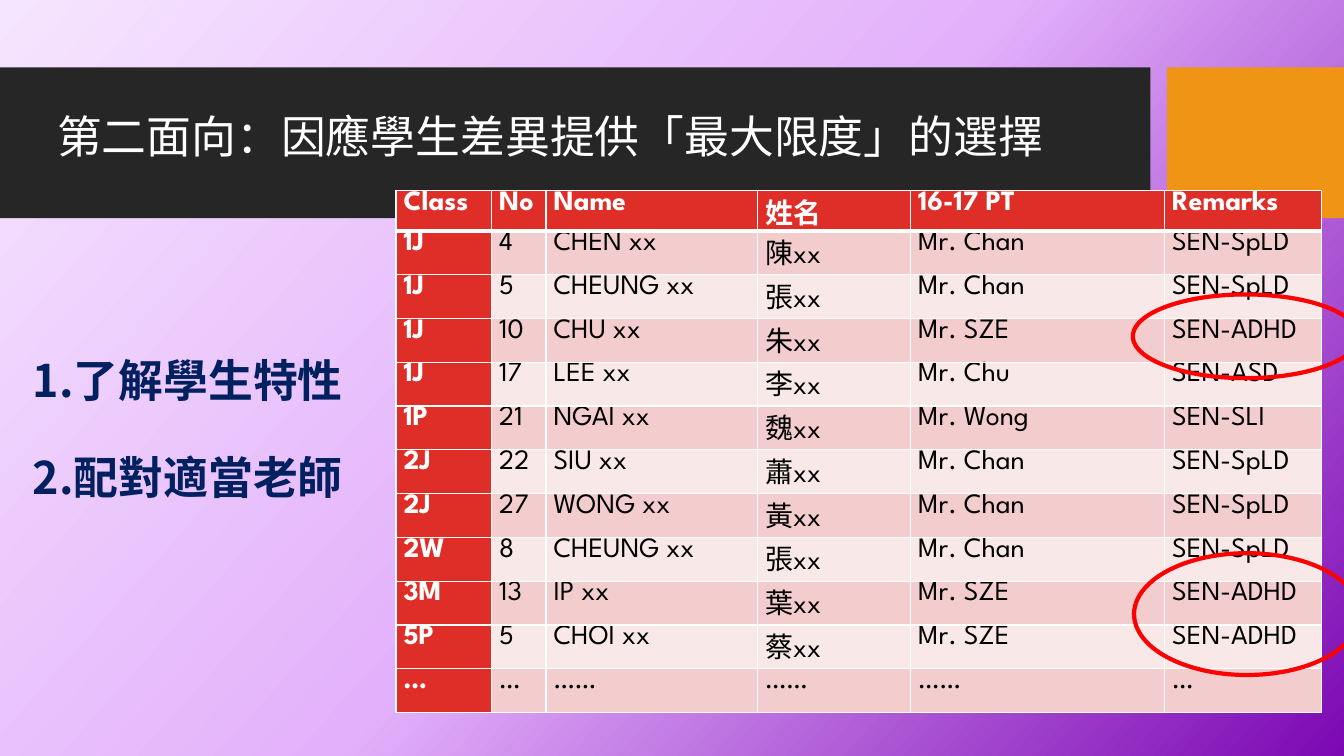
from copy import deepcopy

from lxml import etree
from pptx import Presentation
from pptx import util as u
from pptx.dml.color import RGBColor
from pptx.enum import shapes, text
from pptx.oxml import ns

CJK = "Noto Sans CJK SC"
LATIN = "League Spartan"
WHITE, BLACK, NAVY = "FFFFFF", "000000", "002060"
RED, ROSE, PINK = "DF2E28", "F3CDCD", "F9E8E8"
GLOW = ((0, "F6E5FE"), (0.5, "E3B1FB"), (1, "7C08B3"))

WIDTHS = (2.41, 1.37, 5.33, 3.86, 6.4, 3.96)
HEAD = 1.02
TALL = 13.16
ROWS = (
    ("Class", "No", "Name", "姓名", "16-17 PT", "Remarks"),
    ("1J", "4", "CHEN xx", "陳xx", "Mr. Chan", "SEN-SpLD"),
    ("1J", "5", "CHEUNG xx", "張xx", "Mr. Chan", "SEN-SpLD"),
    ("1J", "10", "CHU xx", "朱xx", "Mr. SZE", "SEN-ADHD"),
    ("1J", "17", "LEE xx", "李xx", "Mr. Chu", "SEN-ASD"),
    ("1P", "21", "NGAI xx", "魏xx", "Mr. Wong", "SEN-SLI"),
    ("2J", "22", "SIU xx", "蕭xx", "Mr. Chan", "SEN-SpLD"),
    ("2J", "27", "WONG xx", "黃xx", "Mr. Chan", "SEN-SpLD"),
    ("2W", "8", "CHEUNG xx", "張xx", "Mr. Chan", "SEN-SpLD"),
    ("3M", "13", "IP xx", "葉xx", "Mr. SZE", "SEN-ADHD"),
    ("5P", "5", "CHOI xx", "蔡xx", "Mr. SZE", "SEN-ADHD"),
    ("…", "…", "……", "……", "……", "…"),
)


def color(code):
    return RGBColor.from_string(code)


def sub(node, tag, **attrs):
    return etree.SubElement(node, ns.qn(tag), attrs)


def write(para, words, size=32, font=CJK, ink=WHITE, bold=False, align=None):
    """Add a formatted run, with Chinese glyphs always in the CJK font."""
    run = para.add_run()
    run.text = words
    para.alignment = align
    run.font.size = u.Pt(size)
    run.font.name = font
    run.font.bold = bold
    run.font.color.rgb = color(ink)
    sub(run.font._element, "a:ea", typeface=CJK)


def shade(slide):
    """Fill the background with the three-stop diagonal gradient."""
    fill = slide.background.fill
    fill.gradient()
    fill.gradient_angle = 360 - 42
    first = fill.gradient_stops[0]._gs
    first.addnext(deepcopy(first))
    for stop, (place, code) in zip(fill.gradient_stops, GLOW):
        stop.position = place
        stop.color.rgb = color(code)


def block(slide, kind, *area, fill=None, line=None):
    """Draw a preset shape; area is left, top, width, height in cm."""
    shape = slide.shapes.add_shape(kind, *map(u.Cm, area))
    shape.shadow.inherit = False
    if fill:
        shape.fill.solid()
        shape.fill.fore_color.rgb = color(fill)
    else:
        shape.fill.background()
    if line:
        shape.line.color.rgb = color(line)
        shape.line.width = u.Pt(3)
    else:
        shape.line.fill.background()


def frame(slide, *area):
    box = slide.shapes.add_textbox(*map(u.Cm, area)).text_frame
    box.word_wrap = True
    return box


def steps(slide, items):
    """Write a numbered list with a wide gap between its items."""
    box = frame(slide, 0.58, 8.76, 8.48, 5.74)
    for i, item in enumerate(items):
        para = box.add_paragraph() if i else box.paragraphs[0]
        props = para._p.get_or_add_pPr()
        props.set("marL", str(u.Cm(0.97)))
        props.set("indent", str(-u.Cm(0.97)))
        sub(props, "a:buFont", typeface=CJK)
        sub(props, "a:buAutoNum", type="arabicPeriod")
        if i:
            para.space_before = u.Pt(31)
        write(para, item, ink=NAVY, bold=True)


def edge(cell, side, width):
    line = sub(cell._tc.get_or_add_tcPr(), "a:ln" + side, w=str(u.Pt(width)))
    sub(sub(line, "a:solidFill"), "a:srgbClr", val=WHITE)


def fill_cell(cell, words, row, col):
    strong = row == 0 or col == 0
    cell.margin_left = cell.margin_right = u.Cm(0.19)
    cell.margin_top = cell.margin_bottom = 0
    edge(cell, "L", 1)
    edge(cell, "R", 1)
    edge(cell, "T", 3 if row == 1 else 1)
    edge(cell, "B", 3 if row == 0 else 1)
    cell.fill.solid()
    cell.fill.fore_color.rgb = color(RED if strong else ROSE if row % 2 else PINK)
    write(cell.text_frame.paragraphs[0], words, size=20, font=LATIN,
          ink=WHITE if strong else BLACK, bold=strong,
          align=text.PP_ALIGN.JUSTIFY)


def roster(slide):
    area = map(u.Cm, (9.98, 4.8, sum(WIDTHS), TALL))
    table = slide.shapes.add_table(len(ROWS), len(WIDTHS), *area).table
    for col, width in zip(table.columns, WIDTHS):
        col.width = u.Cm(width)
    for r, row in enumerate(ROWS):
        table.rows[r].height = u.Cm((TALL - HEAD) / (len(ROWS) - 1) if r else HEAD)
        for c, words in enumerate(row):
            fill_cell(table.cell(r, c), words, r, c)


def main():
    deck = Presentation()
    deck.slide_width, deck.slide_height = u.Cm(33.87), u.Cm(19.05)
    slide = deck.slides.add_slide(deck.slide_layouts[6])
    shade(slide)
    rect, oval = shapes.MSO_SHAPE.RECTANGLE, shapes.MSO_SHAPE.OVAL
    block(slide, rect, 0, 1.7, 28.99, 3.8, fill="262626")
    block(slide, rect, 29.41, 1.7, 4.46, 3.8, fill="F09415")
    title = frame(slide, 1.19, 2.62, 25.6, 3)
    write(title.paragraphs[0], "第二面向：因應學生差異提供「最大限度」的選擇")
    roster(slide)
    block(slide, oval, 28.55, 7.42, 5.69, 2.11, line="FF0000")
    block(slide, oval, 28.58, 13.94, 5.69, 3.07, line="FF0000")
    steps(slide, ("了解學生特性", "配對適當老師"))
    deck.save("out.pptx")


if __name__ == "__main__":
    main()
